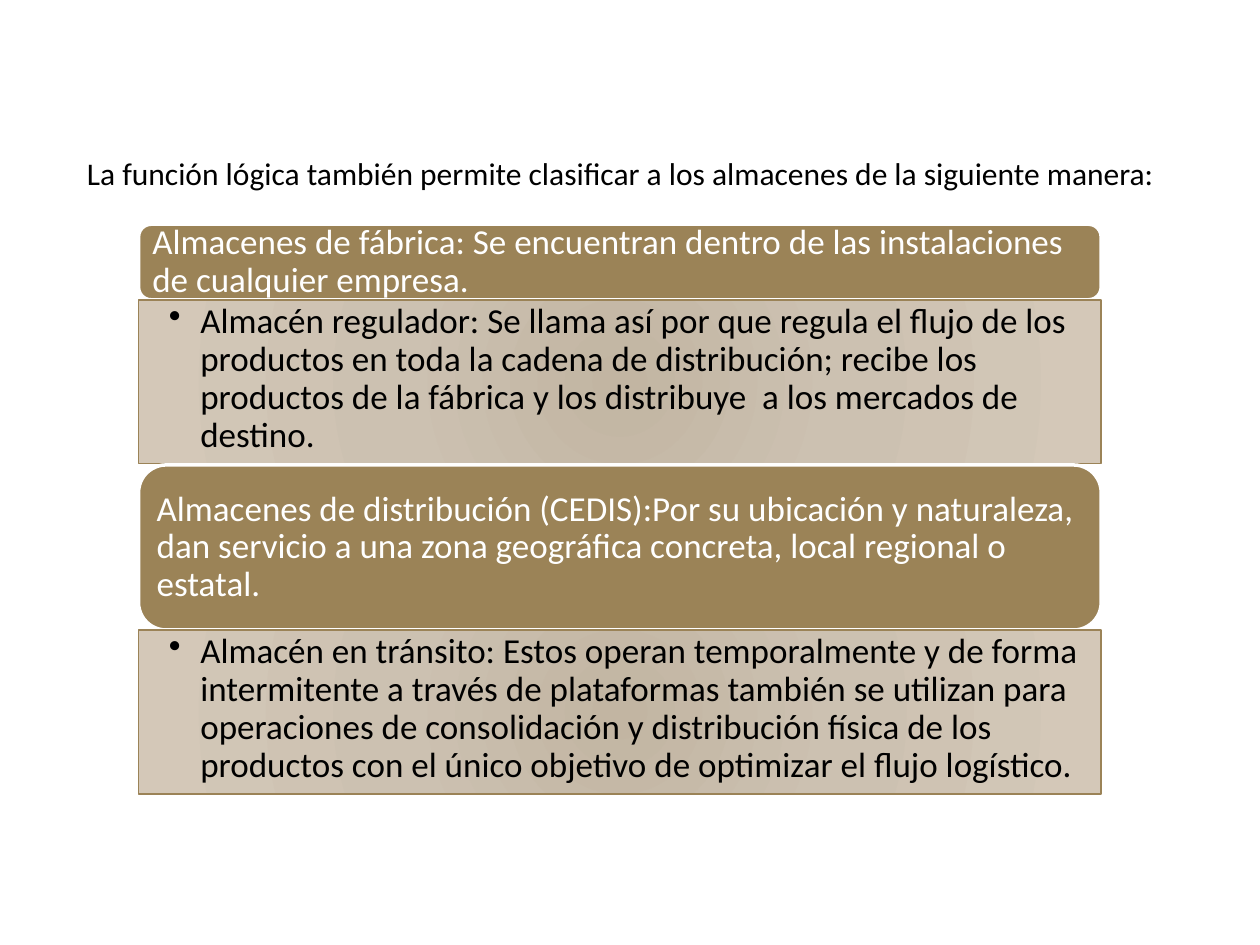
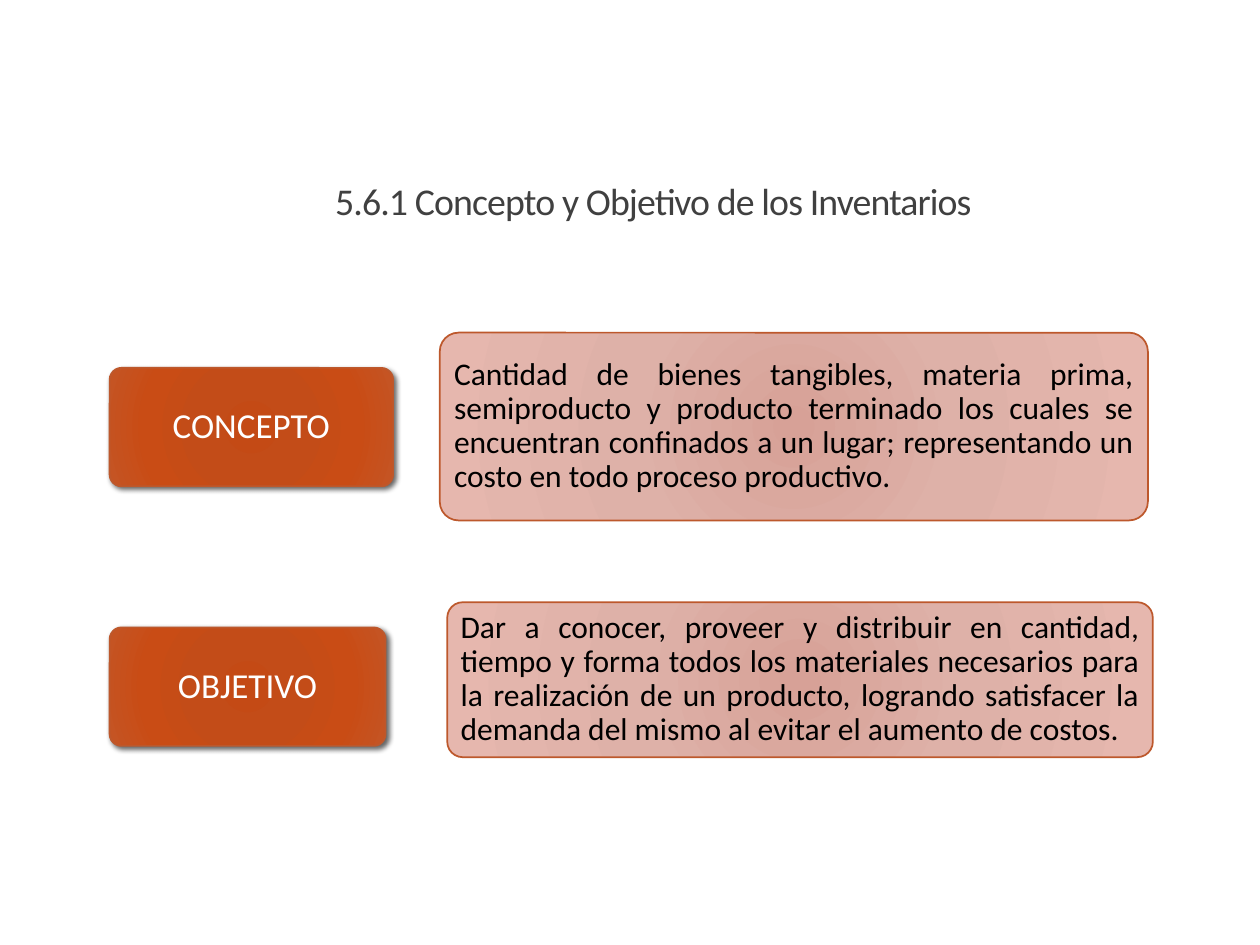
from lxml import etree
from pptx import Presentation, util as u
from pptx.dml.color import RGBColor
from pptx.enum import shapes, text
from pptx.oxml import ns

# Shared look: a grid of 100 columns by 75 rows, one font, one palette
WIDTH, HEIGHT = u.Inches(10), u.Inches(7.5)
COLUMN, ROW = WIDTH / 100, HEIGHT / 75
FONT = "Calibri"
COLORS = {
    "white": "FFFFFF",
    "black": "000000",
    "title": "404040",
    "tan": "9B8357",
    "rust": "BD582C",
}
GRADIENTS = {
    "tan": [(0, "C2B5A2"), (45, "CCC1B1"), (100, "D4C8B8")],
    "rust": [(0, "C44A15"), (34, "C34C18"), (70, "C94C15"), (100, "C45525")],
    "pink": [(0, "D7A197"), (45, "DEB1A8"), (100, "E6B7AE")],
}
ROUND = shapes.MSO_SHAPE.ROUNDED_RECTANGLE
SQUARE = shapes.MSO_SHAPE.RECTANGLE

# Content
WAREHOUSES = [
    ("Almacenes de fábrica: Se encuentran dentro de las instalaciones de "
     "cualquier empresa.",
     "Almacén regulador: Se llama así por que regula el flujo de los productos "
     "en toda la cadena de distribución; recibe los productos de la fábrica y "
     "los distribuye  a los mercados de destino."),
    ("Almacenes de distribución (CEDIS):Por su ubicación y naturaleza, dan "
     "servicio a una zona geográfica concreta, local regional o estatal.",
     "Almacén en tránsito: Estos operan temporalmente y de forma intermitente "
     "a través de plataformas también se utilizan para operaciones de "
     "consolidación y distribución física de los productos con el único "
     "objetivo de optimizar el flujo logístico."),
]
# Each entry: label, its area, definition, its area (column, row, columns, rows)
INVENTORY = [
    ("CONCEPTO", (8.7, 29.2, 22.5, 9.4),
     "Cantidad de bienes tangibles, materia prima, semiproducto y producto "
     "terminado los cuales se encuentran confinados a un lugar; representando "
     "un costo en todo proceso productivo.", (34.9, 26.4, 56.2, 14.9)),
    ("OBJETIVO", (8.7, 49.8, 21.9, 9.4),
     "Dar a conocer, proveer y distribuir en cantidad, tiempo y forma todos "
     "los materiales necesarios para la realización de un producto, logrando "
     "satisfacer la demanda del mismo al evitar el aumento de costos.",
     (35.5, 47.8, 56, 12.3)),
]


def rgb(name):
    return RGBColor.from_string(COLORS[name])


def on_grid(area):
    """Turn column, row, columns, rows into slide lengths."""
    return [round(n * unit) for n, unit in zip(area, (COLUMN, ROW) * 2)]


def add_child(parent, tag, **attributes):
    return etree.SubElement(parent, ns.qn(tag),
                            {key: str(value) for key, value in attributes.items()})


def write(box, words, size=20, color="black", align="LEFT", anchor="MIDDLE",
          insets=(0.08,) * 4, leading=0.9, bullet=False, spacing=None):
    """Fill a box with one formatted paragraph."""
    frame = box.text_frame
    frame.word_wrap = True
    frame.auto_size = text.MSO_AUTO_SIZE.NONE
    frame.vertical_anchor = text.MSO_ANCHOR[anchor]
    (frame.margin_left, frame.margin_top,
     frame.margin_right, frame.margin_bottom) = map(u.Inches, insets)
    para = frame.paragraphs[0]
    para.alignment = text.PP_ALIGN[align]
    para.line_spacing = leading
    para.space_before = u.Pt(0)
    if bullet:
        indent = u.Inches(0.25)
        para.level = 1
        settings = para._p.get_or_add_pPr()
        settings.set("marL", str(indent))
        settings.set("indent", str(-indent))
        add_child(settings, "a:buChar", char="•")
    span = para.add_run()
    span.text = words
    span.font.name, span.font.size = FONT, u.Pt(size)
    span.font.color.rgb = rgb(color)
    if spacing:
        span._r.get_or_add_rPr().set("spc", str(round(spacing * 100)))


def fill_radial(box, stops):
    """Fill a shape with a circular gradient."""
    box.fill.gradient()
    fill = box._element.spPr.find(ns.qn("a:gradFill"))
    for child in list(fill):
        fill.remove(child)
    stop_list = add_child(fill, "a:gsLst")
    for position, color in stops:
        stop = add_child(stop_list, "a:gs", pos=position * 1000)
        add_child(stop, "a:srgbClr", val=color)
    circle = add_child(fill, "a:path", path="circle")
    add_child(circle, "a:fillToRect", **dict.fromkeys("ltrb", 100000))


def cast_shadow(box):
    """Drop a soft shadow down and to the right."""
    effects = box._element.spPr.find(ns.qn("a:effectLst"))
    shadow = add_child(effects, "a:outerShdw", blurRad=u.Pt(3), dist=u.Pt(2),
                       dir=45 * 60000, algn="ctr", rotWithShape=0)
    color = add_child(shadow, "a:srgbClr", val=COLORS["black"])
    add_child(color, "a:alpha", val=60000)


def add_panel(page, area, words, kind=ROUND, fill=None, gradient=None,
              line="rust", line_width=1, corner=None, shadow=False, **style):
    box = page.shapes.add_shape(kind, *on_grid(area))
    box.shadow.inherit = False
    if gradient:
        fill_radial(box, GRADIENTS[gradient])
    else:
        box.fill.solid()
        box.fill.fore_color.rgb = rgb(fill)
    box.line.color.rgb = rgb(line)
    box.line.width = u.Pt(line_width)
    if corner:
        box.adjustments[0] = corner
    if shadow:
        cast_shadow(box)
    write(box, words, **style)


def add_page(deck, title, area, **style):
    """Add a title-only page with its title moved to the given area."""
    page = deck.slides.add_slide(deck.slide_layouts[5])
    heading = page.shapes.title
    heading.left, heading.top, heading.width, heading.height = on_grid(area)
    write(heading, title, insets=(0.1, 0.05, 0.1, 0.05), **style)
    return page


def add_warehouses(deck):
    page = add_page(
        deck, "La función lógica también permite clasificar a los almacenes de "
        "la siguiente manera:", (5.9, 11.7, 88.2, 4),
        size=18, anchor="TOP", leading=1)
    left, width, top, tall = 11, 76.4, 17.8, 13.1
    for (header, detail), header_rows in zip(WAREHOUSES, (6, tall)):
        add_panel(page, (left, top, width, header_rows), header, fill="tan",
                  line="white", line_width=2, color="white")
        top += header_rows
        add_panel(page, (left, top, width, tall - 0.1), detail, kind=SQUARE,
                  gradient="tan", line="tan", anchor="TOP", bullet=True,
                  insets=(0.24, 0.03, 0.16, 0.03))
        top += tall


def add_inventory(deck):
    page = add_page(deck, "5.6.1 Concepto y Objetivo de los Inventarios",
                    (25.6, 13.9, 53.6, 4.3), size=21.6, color="title",
                    anchor="BOTTOM", leading=0.85, spacing=-0.5)
    for label, label_area, definition, definition_area in INVENTORY:
        add_panel(page, label_area, label, gradient="rust", corner=0.1,
                  shadow=True, color="white", align="CENTER")
        add_panel(page, definition_area, definition, gradient="pink",
                  corner=0.1, size=18, align="JUSTIFY", insets=(0.07,) * 4)


def main():
    deck = Presentation()
    deck.slide_width, deck.slide_height = WIDTH, HEIGHT
    add_warehouses(deck)
    add_inventory(deck)
    deck.save("out.pptx")


if __name__ == "__main__":
    main()
